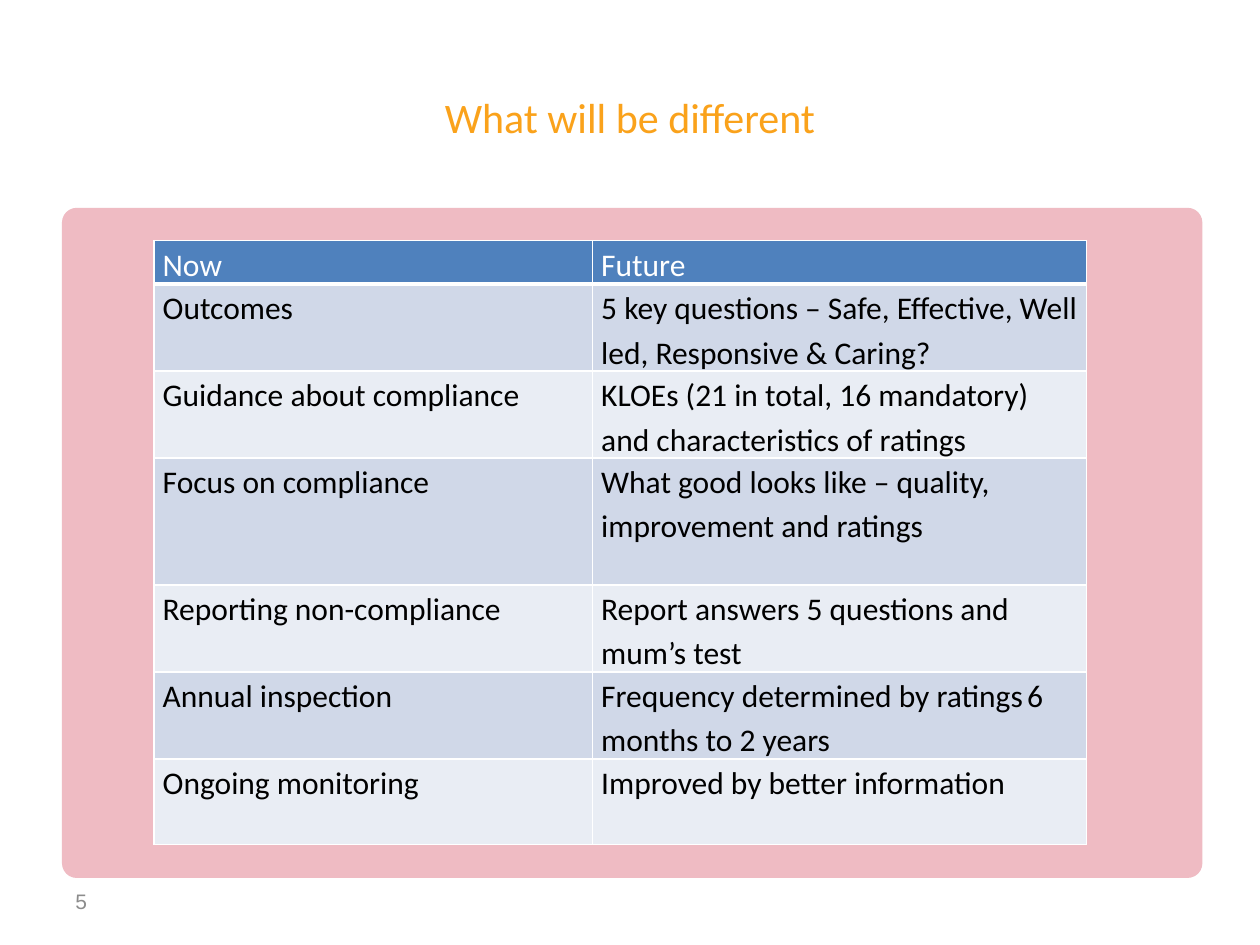
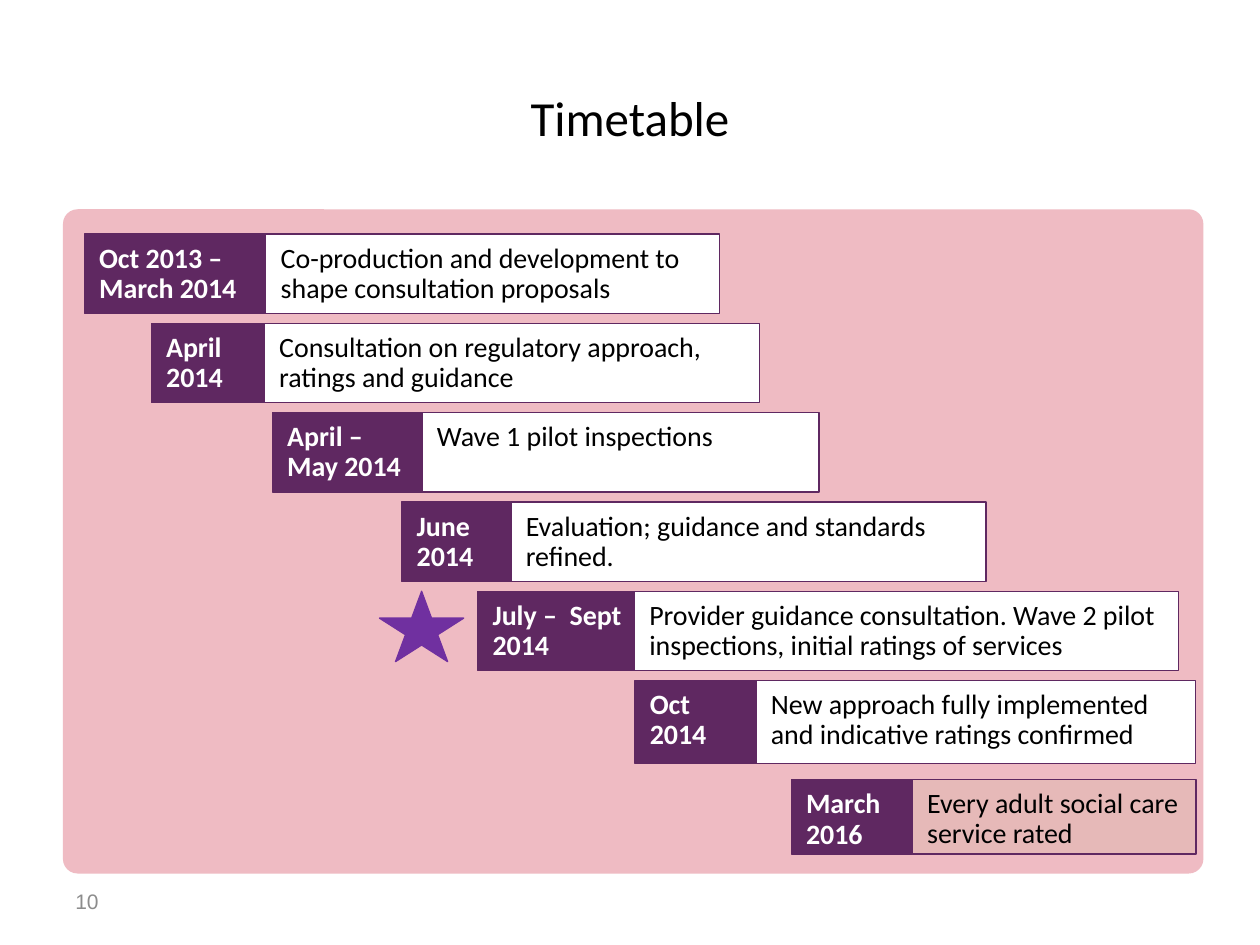
import pptx
import pptx.util
import pptx.dml.color
import pptx.enum.shapes
import pptx.enum.text
import pptx.oxml
import pptx.oxml.ns

Cm = pptx.util.Cm
Pt = pptx.util.Pt
KIND = pptx.enum.shapes.MSO_SHAPE
SIDE = pptx.enum.text.PP_ALIGN
HOLD = pptx.enum.text.MSO_ANCHOR

INK = {
    "panel": "EFBBC3", "gold": "FAA21B", "black": "000000", "white": "FFFFFF",
    "grey": "8C8C8C", "blue": "4F81BD", "dark": "D0D8E8", "light": "E9EDF4",
    "plum": "5F2861", "rose": "E6B9B8", "star": "7030A0",
}

ROWS = [
    ("Now", "Future", 0.86),
    ("Outcomes",
     "5 key questions – Safe, Effective, Well led, Responsive & Caring?", 1.7),
    ("Guidance about compliance",
     "KLOEs (21 in total, 16 mandatory) and characteristics of ratings", 1.75),
    ("Focus on compliance",
     "What good looks like – quality, improvement and ratings", 2.56),
    ("Reporting non-compliance",
     "Report answers 5 questions and mum’s test", 1.75),
    ("Annual inspection",
     ("Frequency determined by ratings", " ", "6 months to 2 years"), 1.73),
    ("Ongoing monitoring", "Improved by better information", 1.73),
]

STEPS = [
    (0.43, 3.66, 9.14, "Oct 2013 – March 2014",
     "Co-production and development to shape consultation proposals"),
    (1.78, 2.28, 9.98, "April 2014",
     "Consultation on regulatory approach, ratings and guidance"),
    (4.22, 3.02, 8, "April –\vMay 2014", "Wave 1 pilot inspections"),
    (6.83, 2.2, 9.58, "June 2014", "Evaluation; guidance and standards refined."),
    (8.36, 3.16, 10.97, "July –  Sept 2014",
     "Provider guidance consultation. Wave 2 pilot inspections, initial ratings of services"),
    (11.53, 2.44, 8.86, "Oct 2014",
     "New approach fully implemented and indicative ratings confirmed"),
    (14.68, 2.44, 5.72, "March 2016", "Every adult social care service rated"),
]
TOP, STEP = 0.5, 1.8
STAR = 4


def tint(name):
    return pptx.dml.color.RGBColor.from_string(INK[name])


def style(para, size, ink, face="Calibri", bold=False):
    for run in para.runs:
        run.font.size = Pt(size)
        run.font.name = face
        run.font.bold = bold
        run.font.color.rgb = tint(ink)


def label(slide, box, text, size, ink, face="Calibri", align=SIDE.LEFT):
    frame = slide.shapes.add_textbox(*map(Cm, box)).text_frame
    frame.word_wrap = True
    frame.vertical_anchor = HOLD.MIDDLE
    frame.text = text
    frame.paragraphs[0].alignment = align
    style(frame.paragraphs[0], size, ink, face)


def block(slide, kind, box, fill, line=None):
    shape = slide.shapes.add_shape(kind, *map(Cm, box))
    shape.shadow.inherit = False
    shape.fill.solid()
    shape.fill.fore_color.rgb = tint(fill)
    if line:
        shape.line.color.rgb = tint(line)
        shape.line.width = Pt(0.75)
    else:
        shape.line.fill.background()
    return shape


def base(deck, title, size, ink, page, box):
    slide = deck.slides.add_slide(deck.slide_layouts[6])
    block(slide, KIND.ROUNDED_RECTANGLE, box, "panel").adjustments[0] = 0.022
    label(slide, (1.27, 0.76, 22.86, 3.18), title, size, ink, align=SIDE.CENTER)
    label(slide, (1.27, 17.65, 5.92, 1.02), page, 12, "grey", "Arial")
    return slide


def edge(cell, tag, width):
    line = pptx.oxml.parse_xml(
        f'<a:{tag} {pptx.oxml.ns.nsdecls("a")} w="{Pt(width)}"><a:solidFill>'
        f'<a:srgbClr val="{INK["white"]}"/></a:solidFill></a:{tag}>')
    props = cell._tc.get_or_add_tcPr()
    props.insert(len(props) - 1, line)


def fill_cell(cell, text, row):
    cell.fill.solid()
    fill = "blue" if row == 0 else "dark" if row % 2 else "light"
    cell.fill.fore_color.rgb = tint(fill)
    cell.margin_left = cell.margin_right = Cm(0.18)
    cell.margin_top = cell.margin_bottom = 0
    for tag in ("lnL", "lnR", "lnT", "lnB"):
        edge(cell, tag, 3 if row == 0 and tag == "lnB" else 1)
    para = cell.text_frame.paragraphs[0]
    para.line_spacing = 1.15
    for part in [text] if isinstance(text, str) else text:
        para.add_run().text = part
    style(para, 18, "black" if row else "white")
    for run in para.runs:
        if run.text == " ":
            run.font.size = Pt(10)


def grid(slide, box):
    left, top, width, height = box
    table = slide.shapes.add_table(
        len(ROWS), 2, Cm(left + 1.85), Cm(top + 0.66), Cm(18.8), Cm(12.08)).table
    for col, wide in zip(table.columns, (8.84, 9.96)):
        col.width = Cm(wide)
    for row, (now, future, high) in enumerate(ROWS):
        table.rows[row].height = Cm(high)
        fill_cell(table.cell(row, 0), now, row)
        fill_cell(table.cell(row, 1), future, row)


def card(slide, box, text, fill, ink, bold=False):
    shape = block(slide, KIND.RECTANGLE, box, fill, "plum")
    frame = shape.text_frame
    frame.word_wrap = True
    frame.vertical_anchor = HOLD.TOP
    frame.margin_left, frame.margin_top = Cm(0.3), Cm(0.2)
    frame.margin_right = frame.margin_bottom = Cm(0.1)
    frame.text = text
    para = frame.paragraphs[0]
    para.alignment = SIDE.LEFT
    para.line_spacing = 0.9
    style(para, 16, ink, bold=bold)
    return shape


def stairs(slide, box):
    left, top, width, height = box
    last = len(STEPS) - 1
    tall = {last - 1: 1.68, last: 1.5}
    for num, (shift, date_w, text_w, date, text) in enumerate(STEPS):
        x = left + shift
        y = top + TOP + num * STEP + (0.2 if num == last else 0)
        high = tall.get(num, 1.6)
        fill = "rose" if num == last else "white"
        body = card(slide, (x + date_w, y, text_w, high), text, fill, "black")
        if num == last:
            body.text_frame.vertical_anchor = HOLD.MIDDLE
        card(slide, (x, y, date_w, high), date, "plum", "white", True)
        if num == STAR:
            block(slide, KIND.STAR_5_POINT, (x - 1.98, y, 1.7, 1.42), "star", "star")


def main():
    deck = pptx.Presentation()
    deck.slide_width, deck.slide_height = Cm(25.4), Cm(19.05)
    box = (1.25, 4.19, 22.99, 13.51)
    grid(base(deck, "What will be different", 24, "gold", "5", box), box)
    box = (1.27, 4.22, 22.99, 13.39)
    stairs(base(deck, "Timetable", 28, "black", "10", box), box)
    deck.save("out.pptx")


if __name__ == "__main__":
    main()
